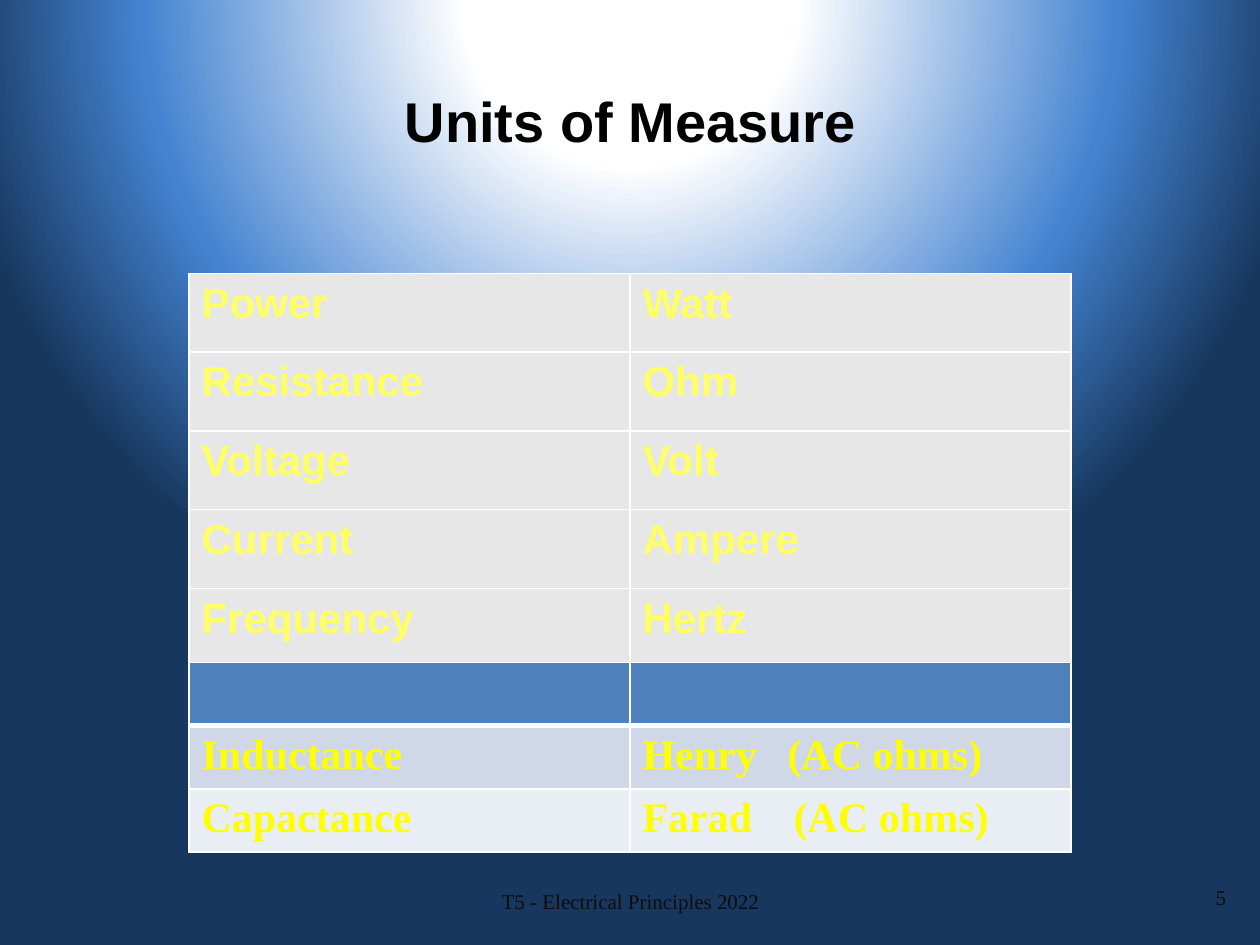
from lxml import etree
from pptx import Presentation
from pptx.dml.color import RGBColor
from pptx.enum.text import MSO_ANCHOR, PP_ALIGN
from pptx.oxml import parse_xml
from pptx.oxml.ns import nsdecls, qn
from pptx.util import Inches, Pt

LEFT, MID, RIGHT = PP_ALIGN.LEFT, PP_ALIGN.CENTER, PP_ALIGN.RIGHT
CENTER = MSO_ANCHOR.MIDDLE
SANS, SERIF = "Arial", "Times New Roman"
WHITE, INK = "FFFFFF", "0D0D0D"
STOPS = [(21, WHITE, 100), (62, "4483D1", 100), (87, "17375E", 78)]
UNITS = [
    ("Power", "Watt"),
    ("Resistance", "Ohm"),
    ("Voltage", "Volt"),
    ("Current", "Ampere"),
    ("Frequency", "Hertz"),
]
EXTRA = [
    ("", ""),
    ("Inductance", "Henry\t(AC ohms)"),
    ("Capactance", "Farad\t(AC ohms)"),
]
TABS = {"Henry\t(AC ohms)": 1.15, "Farad\t(AC ohms)": 1.2}


def color(code):
    return RGBColor.from_string(code)


def write(frame, text, font=SERIF, size=12, ink=INK, bold=False,
          align=LEFT, line=None, before=None, tab=None):
    para = frame.paragraphs[0]
    para.alignment = align
    para.line_spacing = line
    if before:
        para.space_before = Pt(before)
    if tab:
        stops = etree.SubElement(para._p.get_or_add_pPr(), qn("a:tabLst"))
        etree.SubElement(stops, qn("a:tab"), pos=str(Inches(tab)), algn="l")
    run = para.add_run()
    run.text = text
    run.font.name, run.font.size, run.font.bold = font, Pt(size), bold
    run.font.color.rgb = color(ink)


def border(cell, **widths):
    props = cell._tc.get_or_add_tcPr()
    for spot, side in enumerate("LRTB"):
        width = Pt(widths.get(side, 1))
        props.insert(spot, parse_xml(
            f'<a:ln{side} {nsdecls("a")} w="{width}"><a:solidFill>'
            f'<a:srgbClr val="{WHITE}"/></a:solidFill></a:ln{side}>'))


class Page:
    """Holds the current slide and draws each kind of element on it."""

    def __init__(self, slide):
        self.slide = slide

    def back(self, stops):
        marks = "".join(
            f'<a:gs pos="{pos * 1000}"><a:srgbClr val="{code}">'
            f'<a:alpha val="{alpha * 1000}"/></a:srgbClr></a:gs>'
            for pos, code, alpha in stops)
        self.slide._element.cSld.insert(0, parse_xml(
            f'<p:bg {nsdecls("p", "a")}><p:bgPr><a:gradFill rotWithShape="1">'
            f'<a:gsLst>{marks}</a:gsLst><a:path path="circle">'
            '<a:fillToRect l="50000" t="-80000" r="50000" b="180000"/>'
            '</a:path></a:gradFill><a:effectLst/></p:bgPr></p:bg>'))

    def label(self, text, left, top, width, height, **style):
        box = self.slide.shapes.add_textbox(
            Inches(left), Inches(top), Inches(width), Inches(height))
        frame = box.text_frame
        frame.word_wrap = True
        frame.vertical_anchor = CENTER
        write(frame, text, **style)

    def table(self, rows, top, height, fills, head=False, **style):
        shape = self.slide.shapes.add_table(
            len(rows), 2, Inches(1.5), Inches(top),
            Inches(7), Inches(height * len(rows)))
        grid = shape.table
        grid.first_row = head
        grid.horz_banding = False
        for r, row in enumerate(rows):
            for c, text in enumerate(row):
                cell = grid.cell(r, c)
                cell.fill.solid()
                cell.fill.fore_color.rgb = color(fills[r])
                border(cell, T=3 if head and r == 1 else 1,
                       B=3 if head and r == 0 else 1)
                if text:
                    write(cell.text_frame, text, size=24, bold=True,
                          tab=TABS.get(text), **style)


def main():
    deck = Presentation()
    deck.slide_width, deck.slide_height = Inches(10), Inches(7.5)
    page = Page(deck.slides.add_slide(deck.slide_layouts[6]))
    page.back(STOPS)
    page.label("Units of Measure", 0.17, -0.42, 9.67, 2.75, font=SANS,
               size=32, ink="000000", bold=True, align=MID)
    page.table(UNITS, 2.17, 0.625, ["E7E7E7"] * len(UNITS), font=SANS,
               ink="FFFF66", line=1.01, before=6)
    page.label("5", 7.5, 6.92, 2.33, 0.4, align=RIGHT)
    page.label("T5 - Electrical Principles 2022", 3.42, 6.95, 3.17, 0.4,
               align=MID)
    page.table(EXTRA, 5.26, 0.5, ["4F81BD", "D0D8E8", "E9EDF4"], head=True,
               ink="FFFF00")
    deck.save("out.pptx")


if __name__ == "__main__":
    main()
